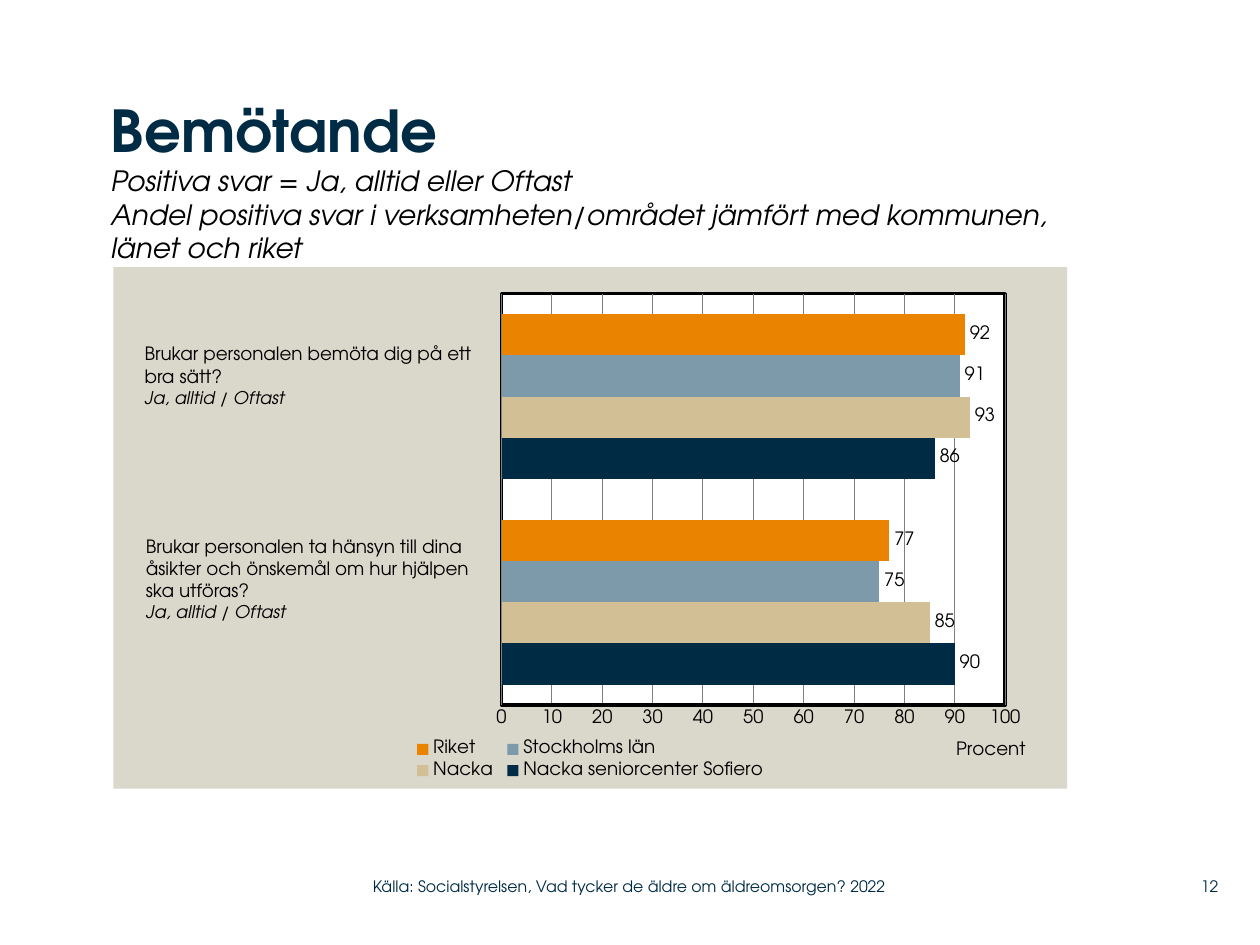
from pptx import Presentation
from pptx import util as u
from pptx.chart.data import CategoryChartData
from pptx.dml.color import RGBColor
from pptx.enum import chart as ch, text
from pptx.oxml import parse_xml
from pptx.oxml.ns import nsdecls, qn

FONT = "TeX Gyre Adventor"
COLORS = {
    "navy": "002B45", "black": "000000", "white": "FFFFFF", "panel": "DAD7CB",
    "sand": "D3BF96", "steel": "7D9AAA", "orange": "E98300", "grid": "808080",
}
SERIES = [
    ("Nacka seniorcenter Sofiero", (90, 86), "navy"),
    ("Nacka", (85, 93), "sand"),
    ("Stockholms län", (75, 91), "steel"),
    ("Riket", (77, 92), "orange"),
]
ANSWER = "Ja, alltid / Oftast"


def rgb(name):
    return RGBColor.from_string(COLORS[name])


def style(font, size=10.5, color="black", bold=False, italic=False):
    font.name, font.size = FONT, u.Pt(size)
    font.bold, font.italic = bold, italic
    font.color.rgb = rgb(color)


def add_text(paragraph, content, align=text.PP_ALIGN.LEFT, **fmt):
    """Write one formatted run; a newline becomes a line break."""
    paragraph.alignment = align
    for i, line in enumerate(content.split("\n")):
        if i:
            paragraph.add_line_break()
        if line:
            run = paragraph.add_run()
            run.text = line
            style(run.font, **fmt)


def prepare_frame(frame, anchor=text.MSO_ANCHOR.TOP, inset=0):
    frame.word_wrap = True
    frame.auto_size = text.MSO_AUTO_SIZE.NONE
    frame.vertical_anchor = anchor
    frame.margin_left = frame.margin_right = u.Inches(inset)
    frame.margin_top = frame.margin_bottom = u.Inches(inset / 2)


def add_box(slide, at, **frame_format):
    frame = slide.shapes.add_textbox(*map(u.Inches, at)).text_frame
    prepare_frame(frame, **frame_format)
    return frame


def add_heading(slide):
    title = slide.shapes.title
    title.left, title.top, title.width, title.height = map(
        u.Inches, (0.88, 0.75, 8.04, 1.2))
    prepare_frame(title.text_frame)
    paragraph = title.text_frame.paragraphs[0]
    paragraph.line_spacing = 1.0
    add_text(paragraph, "Bemötande\n", size=33, color="navy", bold=True)
    add_text(paragraph, "Positiva svar = Ja, alltid eller Oftast\n"
             "Andel positiva svar i verksamheten/området jämfört med kommunen, "
             "länet och riket", size=16, italic=True)


def add_question(slide, at, lines):
    frame = add_box(slide, at, inset=0.1)
    for i, line in enumerate(lines):
        add_text(frame.add_paragraph() if i else frame.paragraphs[0], line)
    add_text(frame.add_paragraph(), ANSWER, size=10, italic=True)


def add_footer(slide, at, content, align=text.PP_ALIGN.LEFT):
    frame = add_box(slide, at, anchor=text.MSO_ANCHOR.MIDDLE)
    add_text(frame.paragraphs[0], content, align, size=9, color="navy")


def set_layout(element, index, x, y, w=None, h=None, inner=False):
    """Place a chart part by fractions of the chart area."""
    for old in element.findall(qn("c:layout")):
        element.remove(old)
    target = '<c:layoutTarget val="inner"/>' if inner else ""
    modes = '<c:xMode val="edge"/><c:yMode val="edge"/>'
    sizes = "".join(f'<c:{key} val="{value}"/>' for key, value in
                    zip("xywh", (x, y, w, h)) if value is not None)
    element.insert(index, parse_xml(
        f'<c:layout {nsdecls("c")}><c:manualLayout>{target}{modes}{sizes}'
        "</c:manualLayout></c:layout>"))


def area_format(fill, line=None):
    outline = (f'<a:ln w="{u.Pt(2)}"><a:solidFill><a:srgbClr val="{COLORS[line]}"/>'
               "</a:solidFill></a:ln>" if line else "<a:ln><a:noFill/></a:ln>")
    return parse_xml(
        f'<c:spPr {nsdecls("c", "a")}><a:solidFill><a:srgbClr val="{COLORS[fill]}"/>'
        f"</a:solidFill>{outline}</c:spPr>")


def format_axes(chart):
    chart.category_axis.visible = False
    axis = chart.value_axis
    axis.minimum_scale, axis.maximum_scale, axis.major_unit = 0, 100, 10
    axis.major_tick_mark = axis.minor_tick_mark = ch.XL_TICK_MARK.NONE
    style(axis.tick_labels.font)
    axis.format.line.color.rgb = rgb("black")
    axis.format.line.width = u.Pt(2)
    axis.has_major_gridlines = True
    axis.major_gridlines.format.line.color.rgb = rgb("grid")
    axis.major_gridlines.format.line.width = u.Pt(0.5)
    axis.has_title = True
    add_text(axis.axis_title.text_frame.paragraphs[0], "Procent")
    set_layout(axis.axis_title._element, 1, 0.88, 0.9)


def add_bar_chart(slide, at):
    data = CategoryChartData(number_format="0")
    data.categories = ["1", "2"]
    for name, values, _ in SERIES:
        data.add_series(name, values)
    chart = slide.shapes.add_chart(
        ch.XL_CHART_TYPE.BAR_CLUSTERED, *map(u.Inches, at), data).chart
    chart.has_title = False
    style(chart.font)
    format_axes(chart)

    # Bars and value labels
    plot = chart.plots[0]
    plot.gap_width, plot.overlap, plot.vary_by_categories = 100, 0, False
    for series, (_, _, color) in zip(plot.series, SERIES):
        series.format.fill.solid()
        series.format.fill.fore_color.rgb = rgb(color)
        labels = series.data_labels
        labels.show_value = True
        labels.position = ch.XL_LABEL_POSITION.OUTSIDE_END
        style(labels.font)

    # Legend, two by two
    chart.has_legend = True
    chart.legend.position = ch.XL_LEGEND_POSITION.BOTTOM
    chart.legend.include_in_layout = False
    style(chart.legend.font)
    set_layout(chart.legend._element, 1, 0.31, 0.9, 0.38, 0.09)

    # Panel and plot backgrounds
    root = chart._chartSpace
    root.chart.addnext(area_format("panel"))
    plot_area = root.chart.plotArea
    set_layout(plot_area, 0, 0.407, 0.051, 0.528, 0.789, inner=True)
    plot_area.append(area_format("white", line="black"))


def main():
    deck = Presentation()
    deck.slide_width, deck.slide_height = u.Inches(10), u.Inches(7.5)
    slide = deck.slides.add_slide(deck.slide_layouts[5])
    add_heading(slide)
    add_bar_chart(slide, (0.9, 2.12, 7.57, 4.14))
    add_question(slide, (1.05, 2.67, 2.97, 0.81),
                 ["Brukar personalen bemöta dig på ett", "bra sätt?"])
    add_question(slide, (1.06, 4.2, 3.01, 0.98),
                 ["Brukar personalen ta hänsyn till dina",
                  "åsikter och önskemål om hur hjälpen", "ska utföras?"])
    add_footer(slide, (2.96, 6.89, 4.43, 0.29),
               "Källa: Socialstyrelsen, Vad tycker de äldre om äldreomsorgen? 2022")
    add_footer(slide, (9.2, 6.89, 0.47, 0.29), "12", text.PP_ALIGN.RIGHT)
    deck.save("out.pptx")


if __name__ == "__main__":
    main()
